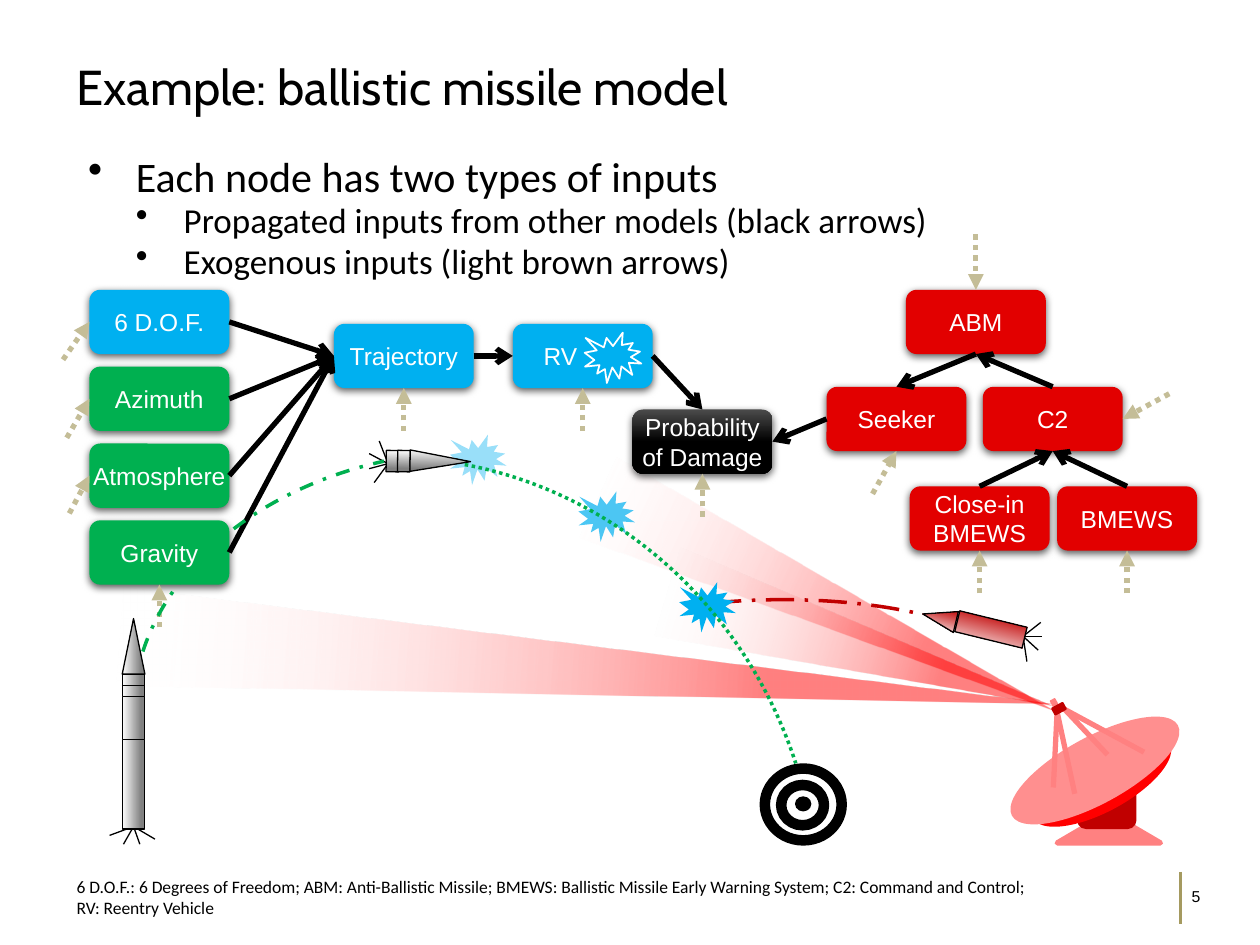
from dataclasses import dataclass
from typing import NamedTuple, Optional, Union

from lxml.etree import SubElement
from pptx import Presentation
from pptx.dml.color import RGBColor
from pptx.enum.dml import MSO_LINE
from pptx.enum.shapes import MSO_CONNECTOR, MSO_SHAPE
from pptx.enum.text import MSO_ANCHOR, PP_ALIGN
from pptx.oxml.ns import qn
from pptx.util import Inches, Pt

BLACK = RGBColor(0x00, 0x00, 0x00)
WHITE = RGBColor(0xFF, 0xFF, 0xFF)
CHARCOAL = RGBColor(0x4B, 0x4B, 0x4B)
GRAY = RGBColor(0x80, 0x80, 0x80)
BLUE = RGBColor(0x00, 0xB0, 0xF0)
GREEN = RGBColor(0x00, 0xB0, 0x50)
NODE_RED = RGBColor(0xE2, 0x00, 0x00)
RED = RGBColor(0xFF, 0x00, 0x00)
DARK_RED = RGBColor(0xC0, 0x00, 0x00)
PINK = RGBColor(0xFF, 0x81, 0x81)
DISH_PINK = RGBColor(0xFF, 0x8F, 0x8F)
TAN = RGBColor(0xC4, 0xBD, 0x97)
OLIVE = RGBColor(0xA5, 0x9A, 0x60)

# The page is a grid of 100 columns by 75 rows
COLUMNS, ROWS = 100, 75
CELL = Inches(0.1)
NODE_WIDTH, NODE_HEIGHT = 11.1, 5.1
TOP, LEFT, BOTTOM, RIGHT = range(4)


class Area(NamedTuple):
    column: float
    row: float
    width: float
    height: float


class Fade(NamedTuple):
    """Two-colour gradient; positions and opacities are shares of one."""
    first: RGBColor
    last: RGBColor
    start: float = 0.16
    end: float = 1.0
    angle: int = 180
    opacity: Optional[tuple] = None


@dataclass
class Node:
    label: str
    column: float
    row: float
    fill: Union[RGBColor, Fade]


@dataclass
class Exogenous:
    target: str
    side: int
    across: float = 0
    down: float = 3.4


STEEL = Fade(GRAY, WHITE)
CRIMSON = Fade(DARK_RED, WHITE)
BEAM = Fade(RED, WHITE, 0.31, 1.0, 270, (0.5, 0))

NODES = [
    Node("6 D.O.F.", 7.1, 23, BLUE),
    *[Node(label, 7.1, 29.1 + 6.1 * index, GREEN)
      for index, label in enumerate(("Azimuth", "Atmosphere", "Gravity"))],
    Node("Trajectory", 26.5, 25.7, BLUE),
    Node("RV", 40.7, 25.7, BLUE),
    Node("Probability of Damage", 50.2, 32.5, Fade(CHARCOAL, BLACK, 0, 0.5, 270)),
    Node("ABM", 71.9, 23, NODE_RED),
    Node("Seeker", 65.6, 30.7, NODE_RED),
    Node("C2", 78, 30.7, NODE_RED),
    Node("Close-in BMEWS", 72.2, 38.6, NODE_RED),
    Node("BMEWS", 83.9, 38.6, NODE_RED),
]
PROPAGATED = [
    *[(label, RIGHT, "Trajectory", LEFT)
      for label in ("6 D.O.F.", "Azimuth", "Atmosphere", "Gravity")],
    ("Trajectory", RIGHT, "RV", LEFT),
    ("RV", RIGHT, "Probability of Damage", TOP),
    ("Seeker", LEFT, "Probability of Damage", RIGHT),
    ("ABM", BOTTOM, "Seeker", TOP),
    ("C2", TOP, "ABM", BOTTOM),
    ("Close-in BMEWS", TOP, "C2", BOTTOM),
    ("BMEWS", TOP, "C2", BOTTOM),
]
EXOGENOUS = [
    Exogenous("6 D.O.F.", LEFT, -2.1, 3),
    Exogenous("Azimuth", LEFT, -1.8, 3.1),
    Exogenous("Atmosphere", LEFT, -1.6, 3),
    *[Exogenous(label, BOTTOM) for label in
      ("Gravity", "Trajectory", "RV", "Probability of Damage", "Close-in BMEWS", "BMEWS")],
    Exogenous("Seeker", BOTTOM, -1.9),
    Exogenous("C2", RIGHT, 3.7, -2),
    Exogenous("ABM", TOP, 0, -4.4),
]


def cells(*counts: float) -> list:
    return [int(count * CELL) for count in counts]


def paint(shape, fill) -> None:
    if fill is None:
        shape.fill.background()
    elif isinstance(fill, Fade):
        shape.fill.gradient()
        shape.fill.gradient_angle = fill.angle
        for stop, color, position in zip(shape.fill.gradient_stops, fill[:2], fill[2:4]):
            stop.color.rgb, stop.position = color, position
        if fill.opacity:
            set_opacity(shape, *fill.opacity)
    else:
        shape.fill.solid()
        shape.fill.fore_color.rgb = fill


def set_opacity(shape, *shares: float) -> None:
    for color, share in zip(shape._element.spPr.iter(qn("a:srgbClr")), shares):
        SubElement(color, qn("a:alpha")).set("val", str(int(share * 100000)))


def draw(canvas, kind, area: Area, fill=None, line=None, weight: float = 0.75,
         dash=None, turn: float = 0, adjust: tuple = ()):
    shape = canvas.add_shape(kind, *cells(*area))
    shape.shadow.inherit = False
    shape.rotation = turn
    for index, value in enumerate(adjust):
        shape.adjustments[index] = value
    paint(shape, fill)
    if line is None:
        shape.line.fill.background()
    else:
        shape.line.color.rgb, shape.line.width = line, Pt(weight)
        shape.line.dash_style = dash
    return shape


def connect(canvas, start, end, color: RGBColor, weight: float, dash=None, head=None):
    line = canvas.add_connector(MSO_CONNECTOR.STRAIGHT, *cells(*start, *end))
    line.line.color.rgb, line.line.width = color, Pt(weight)
    line.line.dash_style = dash
    if head:
        SubElement(line.line._get_or_add_ln(), qn("a:tailEnd")).set("type", head)
    SubElement(line._element.spPr, qn("a:effectLst"))
    return line


def rays(canvas, hub, tips, color: RGBColor = BLACK, weight: float = 0.75) -> None:
    for tip in tips:
        connect(canvas, hub, tip, color, weight)


def write(para, text: str, *, size: float, font: str, color=BLACK, before: float = 0,
          spacing: float = 1, bullet_indent: float = 0) -> None:
    para.space_before, para.line_spacing = Pt(before), spacing
    if bullet_indent:
        settings = para._p.get_or_add_pPr()
        settings.set("marL", str(Inches(bullet_indent)))
        settings.set("indent", str(-Inches(0.38)))
        SubElement(settings, qn("a:buChar")).set("char", "•")
    span = para.add_run()
    span.text = text
    span.font.size, span.font.name, span.font.color.rgb = Pt(size), font, color


def add_text(canvas, area: Area, anchor=MSO_ANCHOR.TOP):
    frame = canvas.add_textbox(*cells(*area)).text_frame
    frame.word_wrap, frame.vertical_anchor = True, anchor
    return frame


def add_node(canvas, node: Node):
    area = Area(node.column, node.row, NODE_WIDTH, NODE_HEIGHT)
    box = draw(canvas, MSO_SHAPE.ROUNDED_RECTANGLE, area, node.fill)
    shadow = SubElement(box._element.spPr.find(qn("a:effectLst")), qn("a:outerShdw"))
    for name, value in (("blurRad", Pt(4.5)), ("dist", Pt(1.5)), ("dir", 5400000), ("rotWithShape", 0)):
        shadow.set(name, str(value))
    color = SubElement(shadow, qn("a:srgbClr"))
    color.set("val", str(BLACK))
    SubElement(color, qn("a:alpha")).set("val", "63000")
    frame = box.text_frame
    frame.word_wrap, frame.vertical_anchor = True, MSO_ANCHOR.MIDDLE
    frame.margin_left = frame.margin_right = frame.margin_top = frame.margin_bottom = 0
    write(frame.paragraphs[0], node.label, size=14, font="Arial", color=WHITE)
    frame.paragraphs[0].alignment = PP_ALIGN.CENTER
    if node.label == "RV":  # leaves room for the burst
        frame.margin_left, frame.paragraphs[0].alignment = Inches(0.22), PP_ALIGN.LEFT
    return box


def add_burst(canvas, column: float, row: float, opacity: float = 1, line=None) -> None:
    burst = draw(canvas, MSO_SHAPE.EXPLOSION1, Area(column, row, 4.5, 4), BLUE, line, 1)
    if opacity < 1:
        set_opacity(burst, opacity)


def add_rocket(canvas, hub, tips, stages, nose: Area, fill: Fade, turn: float = 0) -> None:
    group = canvas.add_group_shape().shapes
    rays(group, hub, tips)
    for stage in stages:
        draw(group, MSO_SHAPE.RECTANGLE, Area(*stage), fill, BLACK, turn=turn)
    draw(group, MSO_SHAPE.ISOSCELES_TRIANGLE, nose, fill, BLACK, turn=turn)


def add_radar(canvas) -> None:
    group = canvas.add_group_shape().shapes
    tilt = 331.4
    draw(group, MSO_SHAPE.ISOSCELES_TRIANGLE, Area(83.9, 64.5, 8.2, 2.4), PINK, PINK, 3)
    draw(group, MSO_SHAPE.ROUNDED_RECTANGLE, Area(85.5, 61.6, 4.7, 4.2), DARK_RED)
    draw(group, MSO_SHAPE.CHORD, Area(81.2, 59.5, 12.4, 4.9), RED, turn=tilt, adjust=(209.02, 115))
    draw(group, MSO_SHAPE.OVAL, Area(79.4, 58.5, 15, 5.3), DISH_PINK, turn=tilt)
    rays(group, (84.5, 56.3), [(87.9, 59.9), (90.8, 59.7)], PINK, 3)
    rays(group, (83.9, 56.5), [(83.6, 62.5), (85.3, 63)], PINK, 3)
    draw(group, MSO_SHAPE.ROUNDED_RECTANGLE, Area(83.3, 55.6, 0.8, 0.5), PINK, turn=tilt + 90 - 360)
    draw(group, MSO_SHAPE.ROUNDED_RECTANGLE, Area(83.5, 55.9, 1.1, 0.7), DARK_RED, turn=tilt)


def add_scene(canvas) -> None:
    # Radar beams
    for area, turn in ((Area(42.7, 16, 7.8, 74.4), 94.1), (Area(62.1, 28, 7, 39.9), 115),
                       (Area(64.6, 35.6, 7.3, 31.8), 106.5)):
        draw(canvas, MSO_SHAPE.ISOSCELES_TRIANGLE, area, BEAM, turn=turn)
    add_radar(canvas)
    # Interceptor
    add_rocket(canvas, (81.2, 50.5), [(82.7, 50.5), (81.5, 52.5), (82.6, 49.4), (82.4, 51.6)],
               [(77.8, 47.2, 1.7, 5.5)], Area(73.7, 47.7, 1.7, 2.7), CRIMSON, 283.7)
    # Target
    target = canvas.add_group_shape().shapes
    draw(target, MSO_SHAPE.OVAL, Area(60.7, 61, 6.1, 5.7), None, BLACK, 6)
    draw(target, MSO_SHAPE.OVAL, Area(62, 62.3, 3.4, 3.2), None, BLACK, 6)
    draw(target, MSO_SHAPE.OVAL, Area(63.1, 63.2, 1.3, 1.2), BLACK)
    # Bursts and interceptor path
    add_burst(canvas, 35.7, 34.5, 0.4)
    add_burst(canvas, 45.9, 39, 0.7)
    draw(canvas, MSO_SHAPE.ARC, Area(43.8, 47.6, 36.7, 11.6), None, DARK_RED, 2,
         MSO_LINE.LONG_DASH_DOT, adjust=(134.95, 201.04))
    # Launch vehicle and separated stage
    add_rocket(canvas, (10.6, 65.6), [(11.1, 67), (8.7, 66.3), (12.3, 66.6), (9.8, 67)],
               [(9.7, row, 1.8, height) for row, height in
                ((58.7, 7.1), (55.3, 3.4), (54.4, 0.9), (53.5, 0.9))],
               Area(9.7, 49.1, 1.8, 4.4), STEEL)
    add_rocket(canvas, (30.8, 36.8), [(29.3, 37.2), (30.1, 35), (29.7, 38.3), (29.3, 36)],
               [(30.3, 36.1, 1.7, 1), (31.2, 36.1, 1.7, 1)], Area(34.1, 34.2, 1.7, 4.8), STEEL, 90.9)
    add_burst(canvas, 53.9, 46.2)


def add_network(canvas) -> None:
    boxes = {node.label: add_node(canvas, node) for node in NODES}
    add_burst(canvas, 46.4, 26.4, line=WHITE)
    for source, source_side, target, target_side in PROPAGATED:
        arrow = connect(canvas, (0, 0), (1, 1), BLACK, 3, head="arrow")
        arrow.begin_connect(boxes[source], source_side)
        arrow.end_connect(boxes[target], target_side)
    for entry in EXOGENOUS:
        arrow = connect(canvas, (0, 0), (1, 1), TAN, 3, MSO_LINE.ROUND_DOT, "triangle")
        arrow.end_connect(boxes[entry.target], entry.side)
        across, down = cells(entry.across, entry.down)
        arrow.begin_x, arrow.begin_y = arrow.end_x + across, arrow.end_y + down


def main() -> None:
    deck = Presentation()
    deck.slide_width, deck.slide_height = cells(COLUMNS, ROWS)
    canvas = deck.slides.add_slide(deck.slide_layouts[6]).shapes

    # Page number, title, bullets and footnote
    number = add_text(canvas, Area(93.6, 69.8, 3.9, 2.7), MSO_ANCHOR.MIDDLE)
    write(number.paragraphs[0], "5", size=9, font="Arial")
    connect(canvas, (93.7, 69.2), (93.7, 73.3), OLIVE, 2)
    title = add_text(canvas, Area(5.1, 4, 90, 5.7), MSO_ANCHOR.MIDDLE)
    write(title.paragraphs[0], "Example: ballistic missile model", size=28, font="Cabin")
    body = add_text(canvas, Area(6, 12.2, 83.9, 10.7))
    write(body.paragraphs[0], "Each node has two types of inputs", size=24, font="Calibri",
          spacing=0.8, bullet_indent=0.38)
    for text in ("Propagated inputs from other models (black arrows)",
                 "Exogenous inputs (light brown arrows)"):
        para = body.add_paragraph()
        para.level = 1
        write(para, text, size=20, font="Calibri", before=3.8, spacing=0.8, bullet_indent=0.76)
    footnote = add_text(canvas, Area(5.1, 69, 78.9, 6))
    write(footnote.paragraphs[0], "6 D.O.F.: 6 Degrees of Freedom; ABM: Anti-Ballistic Missile; "
          "BMEWS: Ballistic Missile Early Warning System; C2: Command and Control; "
          "RV: Reentry Vehicle", size=10, font="Calibri")

    add_scene(canvas)
    add_network(canvas)
    # Boost and reentry paths
    draw(canvas, MSO_SHAPE.ARC, Area(17.4, 28.9, 41.8, 55.5), None, GREEN, 2,
         MSO_LINE.DASH_DOT, 270, (168.24, 203.2))
    draw(canvas, MSO_SHAPE.ARC, Area(-3.4, 36.3, 68.4, 71.8), None, GREEN, 2,
         MSO_LINE.ROUND_DOT, adjust=(167.87, 204.16))
    deck.save("out.pptx")


if __name__ == "__main__":
    main()
